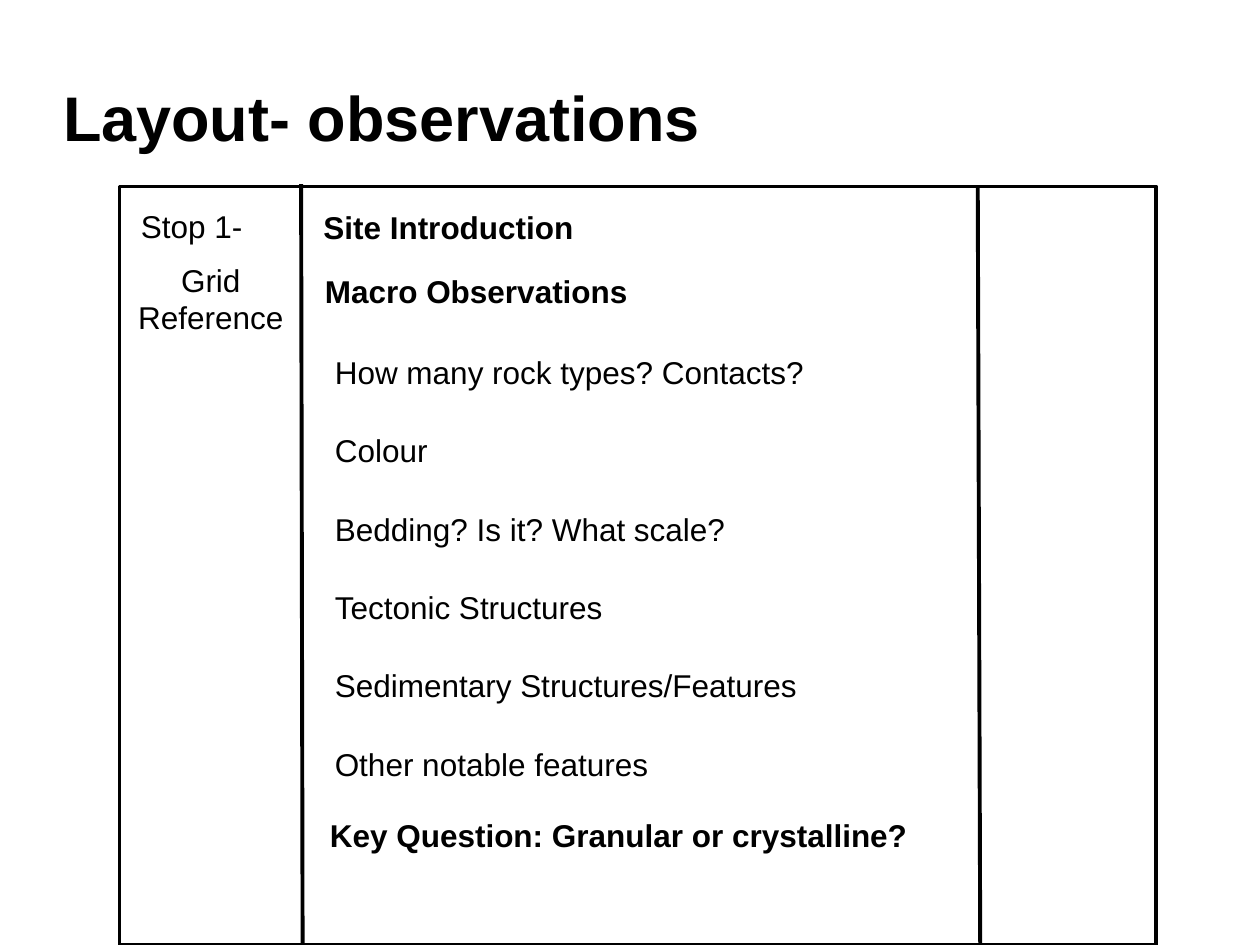
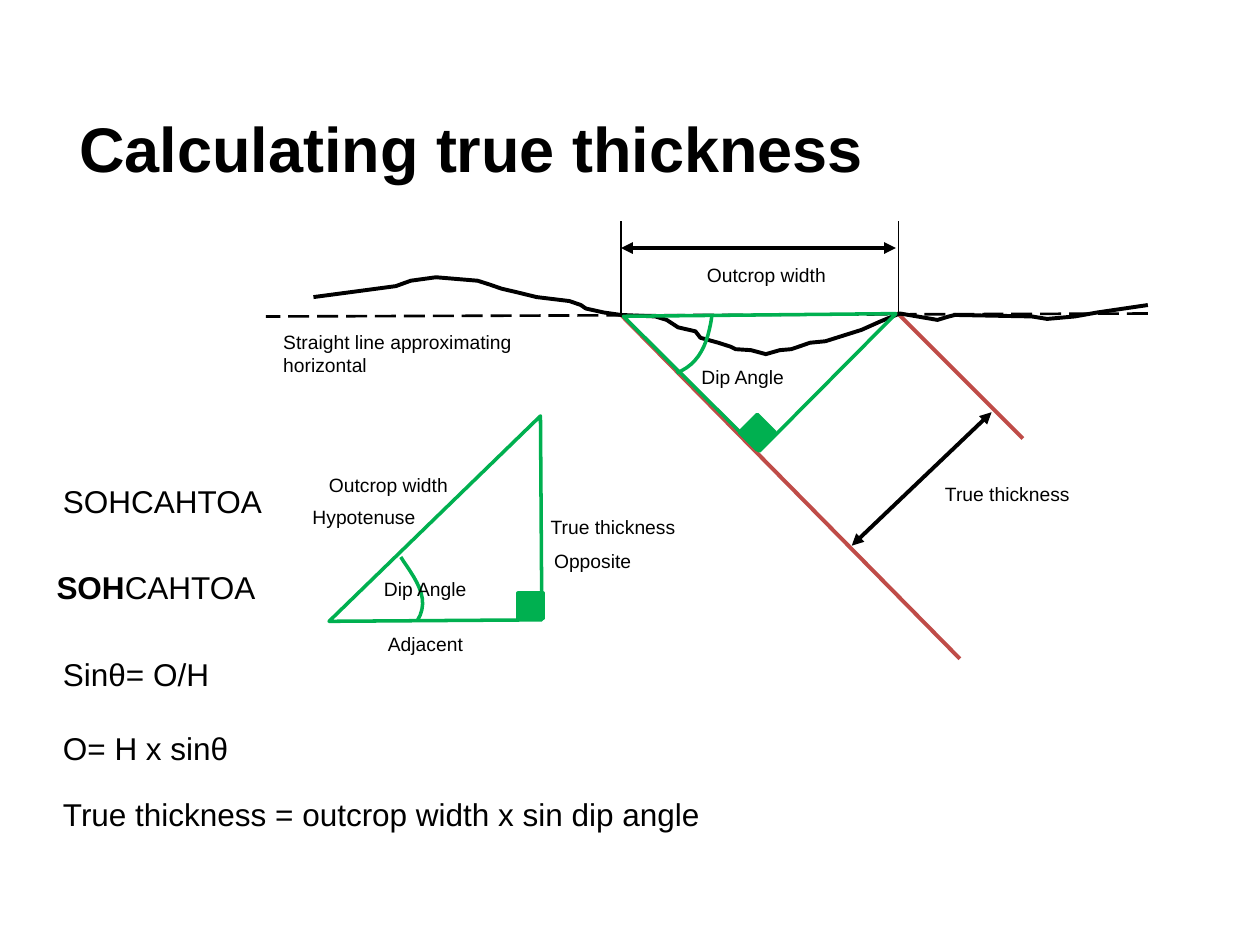
"""Builds two geology fieldwork slides: an observation layout and a true thickness diagram."""
from dataclasses import dataclass

from pptx import Presentation
from pptx.dml.color import RGBColor
from pptx.enum.dml import MSO_LINE_DASH_STYLE as Dash
from pptx.enum.shapes import MSO_CONNECTOR as Connector, MSO_SHAPE as Preset
from pptx.enum.text import MSO_ANCHOR as Anchor, MSO_AUTO_SIZE as AutoSize, PP_ALIGN as Align
from pptx.oxml.ns import qn
from pptx.util import Cm, Pt
from lxml.etree import SubElement


@dataclass(frozen=True)
class Theme:
    font: str = "Arial"
    ink: RGBColor = RGBColor(0, 0, 0)
    paper: RGBColor = RGBColor(255, 255, 255)
    bed: RGBColor = RGBColor(0xBF, 0x4C, 0x48)
    triangle: RGBColor = RGBColor(0, 0xB0, 0x50)
    title_size: float = 36
    text_size: float = 18
    label_size: float = 11
    hairline: float = 0.75
    dashed: float = 1.5
    outline: float = 2
    heavy: float = 2.25


def apply(target, values):
    for name, value in values.items():
        setattr(target, name, value)


def curve(start, pull_out, pull_in, end, steps=12):
    points = []
    for step in range(steps + 1):
        t = step / steps
        weights = ((1 - t) ** 3, 3 * t * (1 - t) ** 2, 3 * t * t * (1 - t), t ** 3)
        corners = (start, pull_out, pull_in, end)
        points.append(tuple(sum(w * c[axis] for w, c in zip(weights, corners))
                            for axis in (0, 1)))
    return points


class Deck:
    def __init__(self, theme):
        self.theme = theme
        self.show = Presentation()
        apply(self.show, {"slide_width": Cm(25.4), "slide_height": Cm(19.05)})
        self.slide = None

    def new_slide(self, heading, left, top, width, height):
        self.slide = self.show.slides.add_slide(self.show.slide_layouts[5])
        title = self.slide.shapes.title
        apply(title, {"left": Cm(left), "top": Cm(top),
                      "width": Cm(width), "height": Cm(height)})
        apply(title.text_frame, {"margin_left": 0, "margin_right": 0, "margin_top": 0,
                                 "margin_bottom": 0, "word_wrap": True,
                                 "auto_size": AutoSize.NONE,
                                 "vertical_anchor": Anchor.MIDDLE})
        self.fill_text(title.text_frame, [(heading, True)], self.theme.title_size, Align.LEFT)

    def fill_text(self, frame, pieces, size, align):
        paragraph = frame.paragraphs[0]
        paragraph.alignment = align
        for words, bold in pieces:
            run = paragraph.add_run()
            run.text = words
            apply(run.font, {"name": self.theme.font, "size": Pt(size), "bold": bold})
            run.font.color.rgb = self.theme.ink

    def text(self, pieces, left, top, width, height=1.02, size=None, align=Align.LEFT):
        if isinstance(pieces, str):
            pieces = [(pieces, False)]
        frame = self.slide.shapes.add_textbox(
            Cm(left), Cm(top), Cm(width), Cm(height)).text_frame
        apply(frame, {"word_wrap": True, "auto_size": AutoSize.SHAPE_TO_FIT_TEXT})
        self.fill_text(frame, pieces, size or self.theme.text_size, align)

    def label(self, words, left, top, width=5.51, height=0.74):
        self.text(words, left, top, width, height, self.theme.label_size)

    def style(self, shape, fill, color, weight):
        shape.shadow.inherit = False
        if fill is None:
            shape.fill.background()
        else:
            shape.fill.solid()
            shape.fill.fore_color.rgb = fill
        shape.line.color.rgb = color
        shape.line.width = Pt(weight)

    def shape(self, preset, left, top, width, height, color, fill=None, rotation=0):
        drawn = self.slide.shapes.add_shape(
            preset, Cm(left), Cm(top), Cm(width), Cm(height))
        drawn.rotation = rotation
        self.style(drawn, fill, color, self.theme.outline)

    def outline(self, points, color, weight):
        start, *rest = [(Cm(x), Cm(y)) for x, y in points]
        builder = self.slide.shapes.build_freeform(*start)
        builder.add_line_segments(rest, close=False)
        self.style(builder.convert_to_shape(), None, color, weight)

    def line(self, start, end, weight, color=None, dash=None, arrows=False):
        drawn = self.slide.shapes.add_connector(
            Connector.STRAIGHT, *(Cm(v) for v in (*start, *end)))
        drawn.line.color.rgb = color or self.theme.ink
        apply(drawn.line, {"width": Pt(weight), "dash_style": dash})
        properties = drawn._element.spPr
        if arrows:
            for tip in ("a:headEnd", "a:tailEnd"):
                SubElement(properties.find(qn("a:ln")), qn(tip), type="triangle")
        SubElement(properties, qn("a:effectLst"))


def build_observations(deck):
    theme = deck.theme
    deck.new_slide("Layout- observations", 1.27, 0.76, 22.86, 3.18)
    deck.shape(Preset.RECTANGLE, 2.41, 3.76, 20.9, 15.29, theme.ink, theme.paper)
    for top_end, bottom_end in (((6.07, 3.71), (6.1, 19.05)),
                                ((19.71, 3.73), (19.76, 19.05))):
        deck.line(top_end, bottom_end, theme.heavy)

    deck.text("Stop 1-", 2.59, 4.04, 3.3)
    deck.text("Grid Reference", 2.41, 5.13, 3.68, 1.8, align=Align.CENTER)

    for section, left, top, width in (
            ("Site Introduction", 6.27, 4.06, 14.17),
            ("Macro Observations", 6.3, 5.36, 14.17),
            ("Key Question: Granular or crystalline?", 6.4, 16.33, 13.34)):
        deck.text([(section, True)], left, top, width)

    prompts = ("How many rock types? Contacts?", "Colour", "Bedding? Is it? What scale?",
               "Tectonic Structures", "Sedimentary Structures/Features",
               "Other notable features")
    for row, prompt in enumerate(prompts):
        deck.text(prompt, 6.5, 6.99 + 1.58 * row, 13.34)


def build_thickness(deck):
    theme = deck.theme
    deck.new_slide("Calculating true thickness", 1.6, 2.06, 17.45, 1.8)

    deck.line((12.52, 6.35), (19.35, 13.28), theme.heavy, theme.bed)
    deck.line((18.08, 6.3), (20.62, 8.84), theme.heavy, theme.bed)
    terrain = (
        (6.32, 5.99), (7.98, 5.77), (8.28, 5.66), (8.79, 5.59), (9.63, 5.66), (9.88, 5.74),
        (10.11, 5.82), (10.41, 5.89), (10.82, 5.99), (11.48, 6.07), (11.71, 6.15),
        (11.81, 6.22), (12.17, 6.3), (12.52, 6.35), (13.21, 6.38), (13.44, 6.45),
        (13.67, 6.6), (14.02, 6.68), (14.12, 6.81), (14.48, 6.91), (14.73, 6.99),
        (14.83, 7.04), (15.14, 7.06), (15.44, 7.14), (15.72, 7.06), (15.95, 7.04),
        (16.1, 6.99), (16.33, 6.91), (16.64, 6.88), (17.37, 6.65), (17.75, 6.48),
        (18.14, 6.32), (18.9, 6.45), (19.13, 6.38), (19.25, 6.35), (20.8, 6.38),
        (21.11, 6.43), (21.67, 6.38), (22.12, 6.3), (23.14, 6.15))
    deck.outline(terrain, theme.ink, theme.heavy)
    deck.line((23.14, 6.32), (5.36, 6.38), theme.dashed, dash=Dash.LONG_DASH)

    deck.line((19.99, 8.31), (17.17, 11), theme.heavy, arrows=True)
    for edge in (12.52, 18.11):
        deck.line((edge, 6.3), (edge, 4.45), theme.hairline)
    deck.line((12.52, 5), (18.06, 5), theme.heavy, arrows=True)

    dip_arcs = (((14.35, 6.38), (14.27, 6.93), (14.1, 7.34), (13.64, 7.52)),
                ((8.08, 11.23), (8.33, 11.62), (8.71, 12.05), (8.41, 12.52)))
    for arc in dip_arcs:
        deck.outline(curve(*arc), theme.triangle, theme.outline)
    for left, top, width, height, rotation in ((13.36, 4.42, 3.91, 3.86, 314.8),
                                               (6.71, 8.31, 4.11, 4.29, 269.6)):
        deck.shape(Preset.RIGHT_TRIANGLE, left, top, width, height,
                   theme.triangle, rotation=rotation)
    for left, top, rotation in ((15.01, 8.46, 45), (10.44, 11.96, 0)):
        deck.shape(Preset.RECTANGLE, left, top, 0.51, 0.51,
                   theme.triangle, theme.triangle, rotation)

    deck.label("Straight line approximating horizontal", 5.46, 6.53, height=1.19)
    for words, *places in (("Dip Angle", (13.89, 7.24), (7.49, 11.51)),
                           ("True thickness", (18.8, 9.6), (10.85, 10.26)),
                           ("Outcrop width", (14, 5.18), (6.38, 9.42))):
        for place in places:
            deck.label(words, *place)
    for side, left, top in (("Hypotenuse", 6.05, 10.06), ("Opposite", 10.92, 10.95),
                            ("Adjacent", 7.57, 12.62)):
        deck.label(side, left, top, 3)

    for step, top, width in (("SOHCAHTOA", 9.6, 13.23), ("Sinθ= O/H", 13.08, 4.55),
                             ("O= H x sinθ", 14.58, 4.55),
                             ("True thickness = outcrop width x sin dip angle", 15.9, 13.64)):
        deck.text(step, 1.02, top, width)
    deck.text([("SOH", True), ("CAHTOA", False)], 0.89, 11.33, 13.23)


def main():
    deck = Deck(Theme())
    build_observations(deck)
    build_thickness(deck)
    deck.show.save("out.pptx")


if __name__ == "__main__":
    main()
